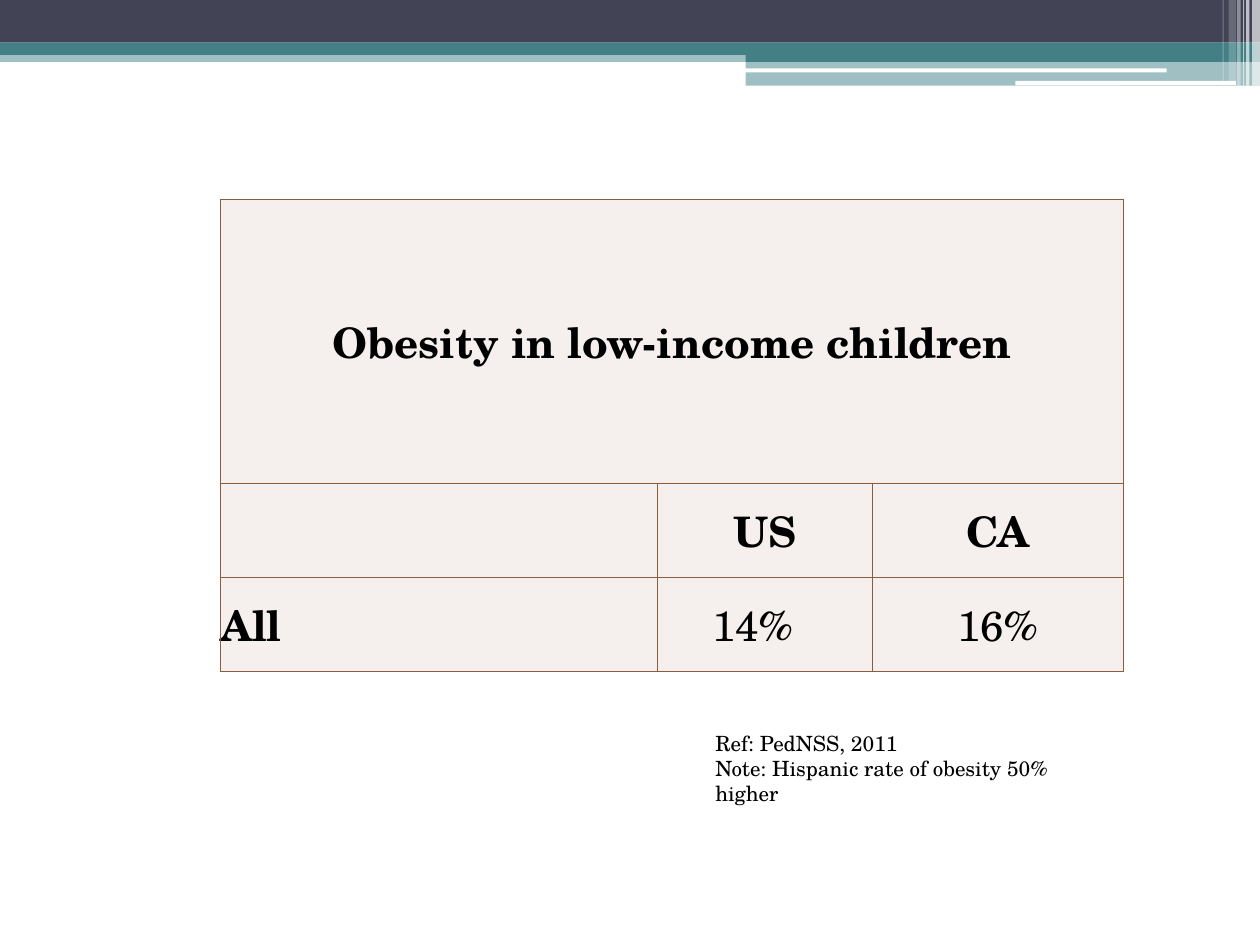
from lxml import etree
from pptx import Presentation
from pptx.dml.color import RGBColor
from pptx.enum.shapes import MSO_SHAPE
from pptx.enum.text import MSO_ANCHOR, PP_ALIGN
from pptx.oxml.ns import qn
from pptx.util import Cm, Pt

RECT, ROUNDED = MSO_SHAPE.RECTANGLE, MSO_SHAPE.ROUNDED_RECTANGLE
LEFT, CENTER = PP_ALIGN.LEFT, PP_ALIGN.CENTER
MIDDLE = MSO_ANCHOR.MIDDLE

THEME = {
    "font": "TeX Gyre Schola", "table_size": 24, "note_size": 12,
    "text": "000000", "navy": "424456", "teal": "438086", "white": "FFFFFF",
    "cell": "F5F0EE", "border": "8B5D3D", "border_width": 0.75,
}

HEADING = "Obesity in low-income children"
ROWS = [["", "US", "CA"], ["All", "14%", "16%"]]
NOTES = ["Ref: PedNSS, 2011", "Note: Hispanic rate of obesity 50% higher"]

COLUMN_WIDTHS = [8.81, 4.34, 5.06]
ROW_HEIGHTS = [5.72, 1.9, 1.9]
TABLE_LEFT, TABLE_TOP = 4.44, 4.02
US_RATE_INSET = 0.48

# left, top, width, height in cm; shape; colour; opacity in percent
BANDS = [
    (0, 1.02, 25.4, 0.23, RECT, "teal", 50),
    (0, 0, 25.4, 0.86, RECT, "navy", 100),
    (0, 0.86, 25.4, 0.25, RECT, "teal", 100),
    (15.03, 1, 10.37, 0.25, RECT, "teal", 100),
    (15.03, 1.23, 10.37, 0.5, RECT, "teal", 50),
    (15.01, 1.38, 8.51, 0.08, ROUNDED, "white", 100),
    (20.47, 1.63, 4.45, 0.09, ROUNDED, "white", 100),
]
# left, width, height in cm; opacity in percent
STRIPES = [
    (25.24, 0.16, 1.73, 65),
    (25.12, 0.07, 1.73, 65),
    (25.06, 0.02, 1.73, 60),
    (24.94, 0.07, 1.73, 40),
    (24.77, 0.15, 1.63, 20),
    (24.65, 0.02, 1.63, 30),
]


def colour(name):
    return RGBColor.from_string(THEME[name])


def add_band(slide, left, top, width, height, outline, fill, opacity):
    band = slide.shapes.add_shape(outline, Cm(left), Cm(top), Cm(width), Cm(height))
    band.shadow.inherit = False
    band.line.fill.background()
    band.fill.solid()
    band.fill.fore_color.rgb = colour(fill)
    if opacity < 100:
        rgb = band.fill._xPr.find(f"{qn('a:solidFill')}/{qn('a:srgbClr')}")
        etree.SubElement(rgb, qn("a:alpha"), val=str(opacity * 1000))


def format_text(paragraph, size, bold=False, align=LEFT):
    paragraph.alignment = align
    for run in paragraph.runs:
        run.font.name = THEME["font"]
        run.font.size = Pt(THEME[size])
        run.font.bold = bold
        run.font.color.rgb = colour("text")


def add_borders(cell):
    properties = cell._tc.get_or_add_tcPr()
    for position, side in enumerate(("lnL", "lnR", "lnT", "lnB")):
        line = etree.Element(qn(f"a:{side}"), w=str(Pt(THEME["border_width"])))
        fill = etree.SubElement(line, qn("a:solidFill"))
        etree.SubElement(fill, qn("a:srgbClr"), val=THEME["border"])
        properties.insert(position, line)


def add_rate_table(slide):
    table = slide.shapes.add_table(
        len(ROW_HEIGHTS), len(COLUMN_WIDTHS), Cm(TABLE_LEFT), Cm(TABLE_TOP),
        Cm(sum(COLUMN_WIDTHS)), Cm(sum(ROW_HEIGHTS))).table
    table.first_row = table.horz_banding = False
    for column, width in zip(table.columns, COLUMN_WIDTHS):
        column.width = Cm(width)
    for row, height in zip(table.rows, ROW_HEIGHTS):
        row.height = Cm(height)
    table.cell(0, 0).merge(table.cell(0, len(COLUMN_WIDTHS) - 1))

    for r, texts in enumerate([[HEADING, "", ""], *ROWS]):
        for c, text in enumerate(texts):
            cell = table.cell(r, c)
            cell.fill.solid()
            cell.fill.fore_color.rgb = colour("cell")
            add_borders(cell)
            cell.vertical_anchor = MIDDLE
            cell.margin_left = cell.margin_right = 0
            cell.margin_top = cell.margin_bottom = 0
            cell.text_frame.text = text
            is_row_label = r > 0 and c == 0
            format_text(cell.text_frame.paragraphs[0], "table_size",
                        bold=not text.endswith("%"),
                        align=LEFT if is_row_label else CENTER)
    table.cell(2, 1).margin_right = Cm(US_RATE_INSET)


def add_notes(slide):
    frame = slide.shapes.add_textbox(Cm(14.17), Cm(14.6), Cm(8.36), Cm(1.27)).text_frame
    frame.word_wrap = True
    frame.text = "\n".join(NOTES)
    for paragraph in frame.paragraphs:
        format_text(paragraph, "note_size")


def main():
    deck = Presentation()
    deck.slide_width, deck.slide_height = Cm(25.4), Cm(19.05)
    slide = deck.slides.add_slide(deck.slide_layouts[6])
    for band in BANDS:
        add_band(slide, *band)
    for left, width, height, opacity in STRIPES:
        add_band(slide, left, 0, width, height, RECT, "white", opacity)
    add_rate_table(slide)
    add_notes(slide)
    deck.save("out.pptx")


if __name__ == "__main__":
    main()
